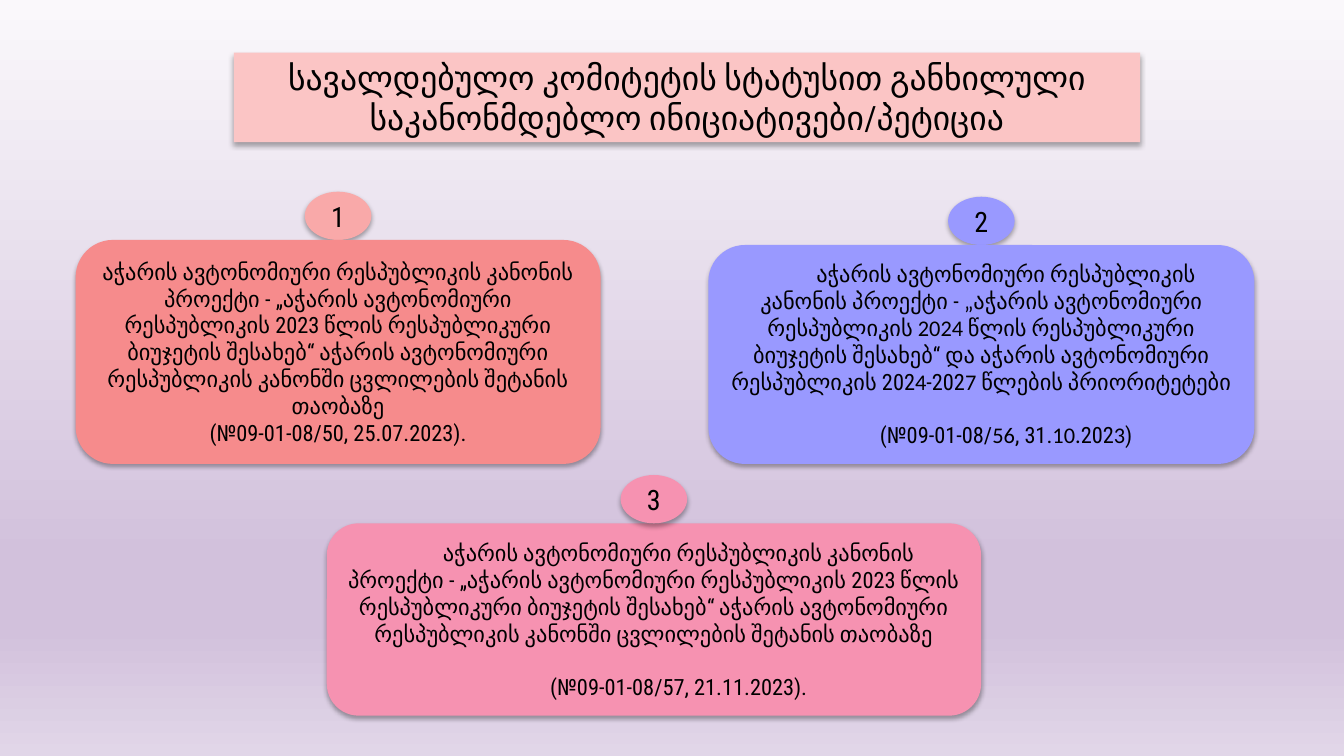
"""Build the slide on initiatives reviewed as the mandatory committee."""
from copy import deepcopy

from pptx import Presentation
from pptx.dml.color import RGBColor
from pptx.enum import shapes, text
from pptx.oxml import ns, parse_xml
from pptx.util import Pt

COLORS = {"black": "000000", "heading": "FBC5C5", "badge": "F9A9A9",
          "red": "F68B8C", "violet": "9999FF", "pink": "F692B1"}
BACKGROUND = [(0, "FAF8FB"), (0.74, "D2C1DC"), (0.83, "D2C1DC"), (1, "E1D6E8")]
MAIN, DIGITS = "Roboto Condensed", "Calibri"
BADGE_WIDTH, BADGE_HEIGHT = 47.5, 34.5


def decorate(panel, color):
    """Fill the panel, remove its outline and give it a soft drop shadow."""
    panel.fill.solid()
    panel.fill.fore_color.rgb = RGBColor.from_string(COLORS[color])
    panel.line.fill.background()
    panel.shadow.inherit = False
    panel.element.xpath("./p:spPr/a:effectLst")[0].append(parse_xml(
        f'<a:outerShdw {ns.nsdecls("a")} blurRad="44450" dist="27940" dir="5400000" '
        f'algn="ctr" rotWithShape="0"><a:srgbClr val="{COLORS["black"]}">'
        '<a:alpha val="32000"/></a:srgbClr></a:outerShdw>'))


def write(panel, paragraphs, size, indent=0, gap=0):
    """Write centred paragraphs, each a list of (wording, font) runs."""
    frame = panel.text_frame
    frame.word_wrap = True
    frame.auto_size = text.MSO_AUTO_SIZE.NONE
    frame.vertical_anchor = text.MSO_ANCHOR.MIDDLE
    for number, runs in enumerate(paragraphs):
        paragraph = frame.add_paragraph() if number else frame.paragraphs[0]
        paragraph.alignment = text.PP_ALIGN.CENTER
        if indent:
            paragraph._p.get_or_add_pPr().set("indent", str(Pt(indent)))
        if number and gap:
            paragraph.space_before = Pt(gap)
        paragraph.font.size = Pt(size)
        paragraph.font.color.rgb = RGBColor.from_string(COLORS["black"])
        for wording, typeface in runs:
            run = paragraph.add_run()
            run.text = wording
            run.font.name = typeface
            run.font.size = Pt(size)
            run.font.color.rgb = RGBColor.from_string(COLORS["black"])


deck = Presentation()
deck.slide_width, deck.slide_height = Pt(960), Pt(540)
slide = deck.slides.add_slide(deck.slide_layouts[5])

backdrop = slide.background.fill
backdrop.gradient()
backdrop.gradient_angle = 270
stop_list = slide.element.xpath(".//a:gsLst")[0]
for extra in range(len(BACKGROUND) - len(stop_list)):
    stop_list.append(deepcopy(stop_list[0]))
for stop, (position, shade) in zip(backdrop.gradient_stops, BACKGROUND):
    stop.position = position
    stop.color.rgb = RGBColor.from_string(shade)

heading = slide.shapes.title
heading.left, heading.top, heading.width, heading.height = map(Pt, (167, 37.5, 647.5, 64))
heading.element.spPr.append(parse_xml(
    f'<a:prstGeom {ns.nsdecls("a")} prst="roundRect"><a:avLst/></a:prstGeom>'))
decorate(heading, "heading")
write(heading, [[("სავალდებულო კომიტეტის სტატუსით განხილული "
                  "საკანონმდებლო ინიციატივები/პეტიცია", MAIN)]], 24)

initiatives = [
    (54, 171.4, 375, 160, "badge", "red", 0, 0, [
        [("აჭარის ავტონომიური რესპუბლიკის კანონის პროექტი - „აჭარის ავტონომიური "
          "რესპუბლიკის 2023 წლის რესპუბლიკური ბიუჯეტის შესახებ“ აჭარის ავტონომიური "
          "რესპუბლიკის კანონში ცვლილების შეტანის თაობაზე", MAIN)],
        [("(№09-01-08/50, 25.07.2023).", MAIN)]]),
    (506, 175, 390, 156.4, "violet", "violet", 35.4, 19, [
        [("აჭარის ავტონომიური რესპუბლიკის კანონის პროექტი - ", MAIN),
         ("„აჭარის ავტონომიური რესპუბლიკის 2024 წლის რესპუბლიკური ბიუჯეტის", DIGITS),
         (" შესახებ“ და აჭარის ავტონომიური რესპუბლიკის 202", MAIN),
         ("4", DIGITS), ("-202", MAIN), ("7 ", DIGITS),
         ("წლების პრიორიტეტები", MAIN)],
        [("(№09-01-08/", MAIN), ("56", DIGITS), (", 31.", MAIN),
         ("10.", DIGITS), ("202", MAIN), ("3", DIGITS), (")", MAIN)]]),
    (233.4, 373.8, 467.4, 137.4, "pink", "pink", 35.4, 19, [
        [("აჭარის ავტონომიური რესპუბლიკის კანონის პროექტი - „აჭარის ავტონომიური "
          "რესპუბლიკის 2023 წლის რესპუბლიკური ბიუჯეტის შესახებ“ აჭარის ავტონომიური "
          "რესპუბლიკის კანონში ცვლილების შეტანის თაობაზე", MAIN)],
        [("(№09-01-08/57, 21.11.2023).", MAIN)]]),
]

for number, initiative in enumerate(initiatives, 1):
    left, top, width, height, badge_color, card_color, indent, gap, wording = initiative
    card = slide.shapes.add_shape(shapes.MSO_SHAPE.ROUNDED_RECTANGLE,
                                  Pt(left), Pt(top), Pt(width), Pt(height))
    decorate(card, card_color)
    write(card, wording, 16, indent, gap)

    badge = slide.shapes.add_shape(shapes.MSO_SHAPE.OVAL,
                                   Pt(left + (width - BADGE_WIDTH) / 2), Pt(top - BADGE_HEIGHT),
                                   Pt(BADGE_WIDTH), Pt(BADGE_HEIGHT))
    decorate(badge, badge_color)
    write(badge, [[(str(number), MAIN)]], 20)
    if number < len(initiatives):
        card.element.addprevious(badge.element)

deck.save("out.pptx")
